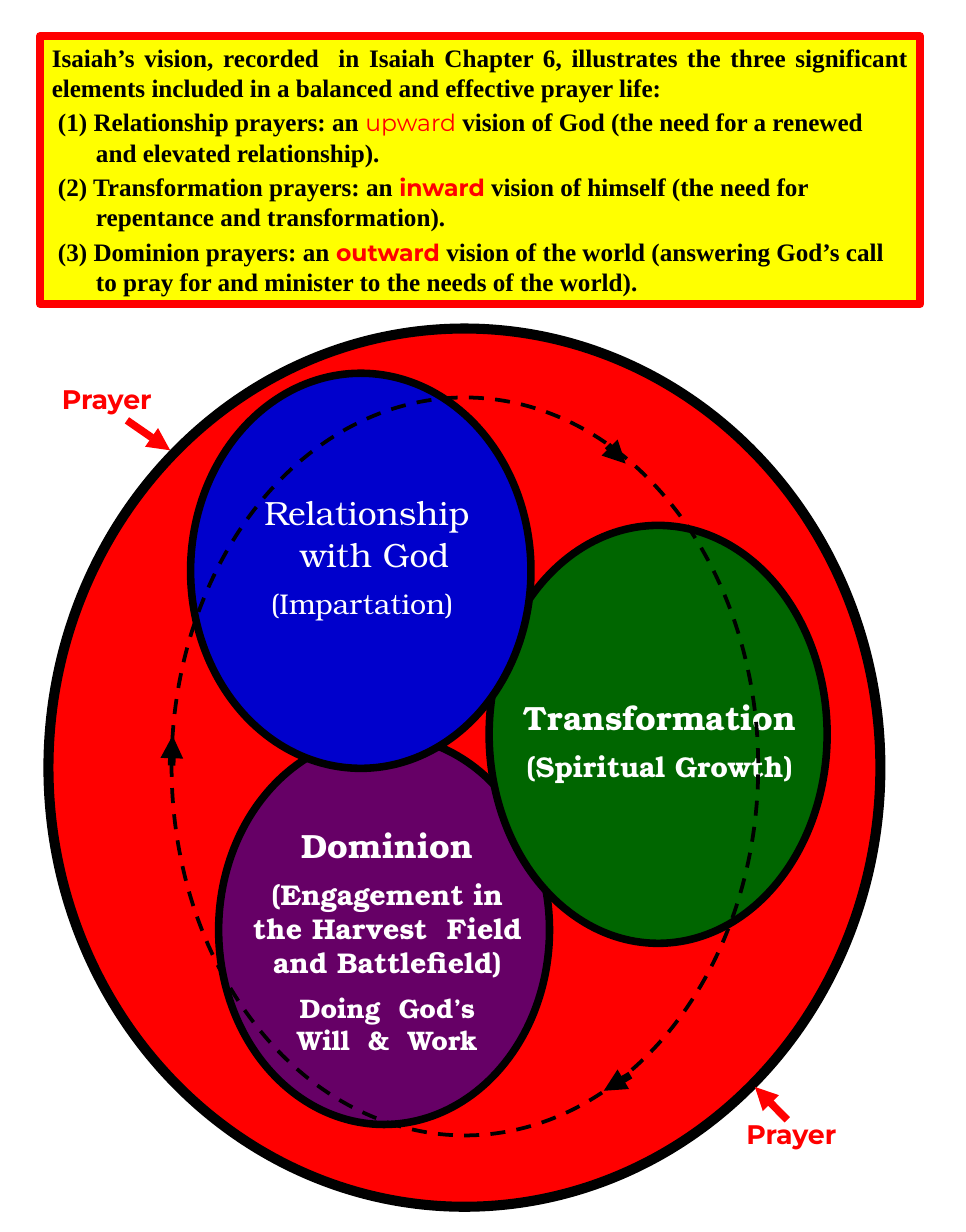
from lxml.etree import SubElement
from pptx import Presentation
from pptx.dml.color import RGBColor
from pptx.enum.dml import MSO_LINE
from pptx.enum.shapes import MSO_CONNECTOR, MSO_SHAPE
from pptx.enum.text import MSO_ANCHOR, PP_ALIGN
from pptx.oxml.ns import qn
from pptx.util import Cm, Pt

RED = RGBColor(0xFF, 0, 0)
YELLOW = RGBColor(0xFF, 0xFF, 0)
BLACK = RGBColor(0, 0, 0)
WHITE = RGBColor(0xFF, 0xFF, 0xFF)
PURPLE = RGBColor(0x66, 0, 0x66)
GREEN = RGBColor(0, 0x66, 0)
BLUE = RGBColor(0, 0, 0xCC)

# Font formats
BODY = {"name": "Times New Roman", "size": Pt(15), "bold": True}
KEY = {"name": "Montserrat", "size": Pt(14), "bold": True}
LIGHT = {**KEY, "bold": False}
TAG = {**KEY, "size": Pt(16)}
ROUND = {"name": "TeX Gyre Bonum"}

# Panel text
INTRO = ("Isaiah’s vision, recorded  in Isaiah Chapter 6, illustrates the three "
         "significant elements included in a balanced and effective prayer life:")
POINTS = [  # start, key word, its format, rest of line, second line
    ("(1) Relationship prayers: an ", "upward", LIGHT,
     " vision of God (the need for a renewed", "and elevated relationship)."),
    ("(2) Transformation prayers: an ", "inward", KEY,
     " vision of himself (the need for", "repentance and transformation)."),
    ("(3) Dominion prayers: an ", "outward", KEY,
     " vision of the world (answering God’s call",
     "to pray for and minister to the needs of the world)."),
]

# Circles, back to front: box, fill, text centre and top, bold, lines
# Each line: text, size, space before, left margin in cm
CIRCLES = [
    ((4.6, 15.47, 6.96, 8.18), PURPLE, (8.15, 17.35), True, [
        ("Dominion", 20, 0, 0),
        ("(Engagement in", 17, 7, 0),
        ("the Harvest  Field", 17, 0, 0),
        ("and Battlefield)", 17, 0, 0),
        ("Doing  God’s", 16, 7, 0),
        ("Will  &  Work", 16, 0, 0)]),
    ((10.29, 11.05, 7.11, 8.79), GREEN, (13.88, 14.66), True, [
        ("Transformation", 20, 0, 0),
        ("(Spiritual Growth)", 17, 7, 0)]),
    ((4.01, 7.85, 7.16, 8.31), BLUE, (7.62, 10.34), False, [
        ("Relationship", 20, 0, 0.2),
        ("with God", 20, 1.5, 0.53),
        ("(Impartation)", 17, 7, 0)]),
]
OUTER = (1.02, 6.91, 17.5, 18.47)
RING = (3.61, 8.36, 12.34, 15.52)

# Arrows: colour, start and end
ARROWS = [
    (BLACK, (13.26, 22.61, 12.7, 22.94)),
    (BLACK, (12.78, 9.37, 13.16, 9.75)),
    (BLACK, (3.61, 16.1, 3.63, 15.47)),
    (RED, (2.67, 8.84, 3.58, 9.47)),
    (RED, (16.56, 23.55, 15.88, 22.86)),
]
TAGS = [(1.3, 8.05), (15.7, 23.5)]


def cms(box):
    return [Cm(v) for v in box]


def add_form(kind, box, fill, edge, width):
    form = slide.shapes.add_shape(kind, *cms(box))
    form.shadow.inherit = False
    if fill is None:
        form.fill.background()
    else:
        form.fill.solid()
        form.fill.fore_color.rgb = fill
    form.line.color.rgb = edge
    form.line.width = Pt(width)
    return form


def set_frame(frame, inset=(0, 0), wrap=True):
    side, top = cms(inset)
    look = {"word_wrap": wrap, "vertical_anchor": MSO_ANCHOR.TOP,
            "margin_left": side, "margin_right": side,
            "margin_top": top, "margin_bottom": top}
    for key, val in look.items():
        setattr(frame, key, val)
    return frame


def add_text(left, top, width, height):
    box = slide.shapes.add_textbox(*cms((left, top, width, height)))
    return set_frame(box.text_frame, wrap=False)


def add_para(frame, align, before=0, left=0):
    first = frame.paragraphs[0]
    para = frame.add_paragraph() if first.runs else first
    para.alignment = align
    para.space_before = Pt(before)
    para._p.get_or_add_pPr().set("marL", str(Cm(left)))
    return para


def add_run(para, text, look, color):
    run = para.add_run()
    run.text = text
    for key, val in look.items():
        setattr(run.font, key, val)
    run.font.color.rgb = color


deck = Presentation()
deck.slide_width, deck.slide_height = Cm(20.32), Cm(25.91)
slide = deck.slides.add_slide(deck.slide_layouts[6])

# Panel
panel = add_form(MSO_SHAPE.RECTANGLE, (0.84, 0.76, 18.52, 5.64), YELLOW, RED, 4.5)
frame = set_frame(panel.text_frame, (0.25, 0.13))
add_run(add_para(frame, PP_ALIGN.JUSTIFY), INTRO, BODY, BLACK)
for start, word, look, rest, more in POINTS:
    para = add_para(frame, PP_ALIGN.LEFT, 2.5, 0.13)
    add_run(para, start, BODY, BLACK)
    add_run(para, word, look, RED)
    add_run(para, rest, BODY, BLACK)
    add_run(add_para(frame, PP_ALIGN.LEFT, 0, 0.93), more, BODY, BLACK)

# Circles and their text
add_form(MSO_SHAPE.OVAL, OUTER, RED, BLACK, 6)
for box, fill, (mid, top), bold, lines in CIRCLES:
    add_form(MSO_SHAPE.OVAL, box, fill, BLACK, 4.5)
    wide = box[2]
    frame = add_text(mid - wide / 2, top, wide, len(lines) * 0.8)
    frame.word_wrap = True
    for text, size, before, left in lines:
        look = {**ROUND, "size": Pt(size), "bold": bold}
        add_run(add_para(frame, PP_ALIGN.CENTER, before, left), text, look, WHITE)
ring = add_form(MSO_SHAPE.OVAL, RING, None, BLACK, 2.25)
ring.line.dash_style = MSO_LINE.DASH

# Arrows
for color, ends in ARROWS:
    arrow = slide.shapes.add_connector(MSO_CONNECTOR.STRAIGHT, *cms(ends))
    arrow.line.color.rgb = color
    arrow.line.width = Pt(4.5)
    arrow.line.dash_style = MSO_LINE.DASH
    SubElement(arrow.line._get_or_add_ln(), qn("a:tailEnd"), type="triangle")
    SubElement(arrow._element.spPr, qn("a:effectLst"))

# Prayer tags
for left, top in TAGS:
    frame = add_text(left, top, 2.3, 0.7)
    add_run(add_para(frame, PP_ALIGN.LEFT), "Prayer", TAG, RED)

deck.save("out.pptx")
